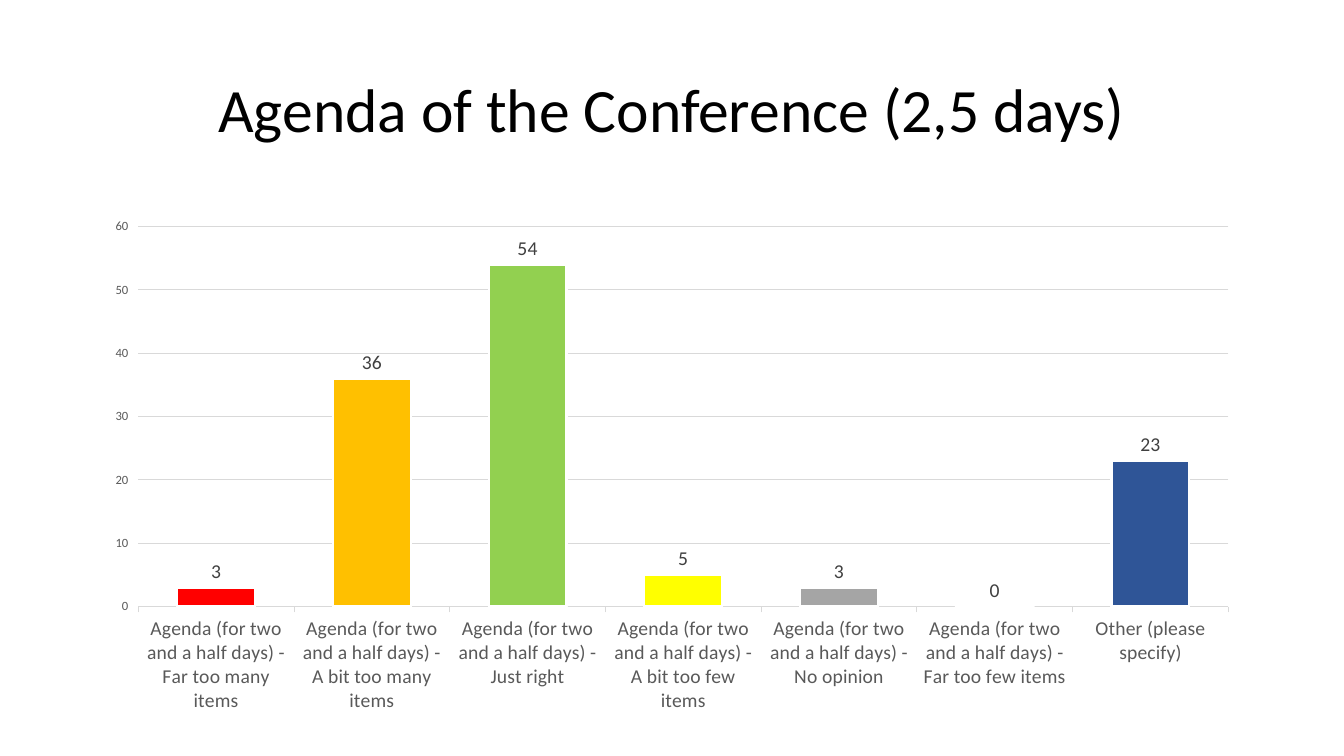
from typing import NamedTuple

from pptx import Presentation
from pptx.chart.data import CategoryChartData
from pptx.dml.color import RGBColor
from pptx.enum.chart import XL_CHART_TYPE, XL_LABEL_POSITION, XL_TICK_MARK
from pptx.enum.text import MSO_ANCHOR, PP_ALIGN
from pptx.util import Emu, Pt

SCALE = 9525  # EMU per px
FACE = "Calibri"
GREY = "D9D9D9"
HALF = "Agenda (for two and a half days) - "


class Box(NamedTuple):
    left: int
    top: int
    width: int
    height: int

    def emu(self) -> list[Emu]:
        return [Emu(n * SCALE) for n in self]


class Bar(NamedTuple):
    label: str
    value: int
    color: str


BARS = [
    Bar(HALF + "Far too many items", 3, "FF0000"),
    Bar(HALF + "A bit too many items", 36, "FFC000"),
    Bar(HALF + "Just right", 54, "92D050"),
    Bar(HALF + "A bit too few items", 5, "FFFF00"),
    Bar(HALF + "No opinion", 3, "A5A5A5"),
    Bar(HALF + "Far too few items", 0, "4472C4"),
    Bar("Other (please specify)", 23, "2F5597"),
]


def rgb(code: str) -> RGBColor:
    return RGBColor.from_string(code)


def assign(target, values: dict) -> None:
    for name, value in values.items():
        setattr(target, name, value)


def style(font, size: int, color: str) -> None:
    assign(font, {"name": FACE, "size": Pt(size), "bold": False})
    font.color.rgb = rgb(color)


def stroke(line, color: str, width: float) -> None:
    line.color.rgb = rgb(color)
    line.width = Pt(width)


def paint(fill, color: str) -> None:
    fill.solid()
    fill.fore_color.rgb = rgb(color)


def add_title(slide, text: str, box: Box) -> None:
    frame = slide.shapes.add_textbox(*box.emu()).text_frame
    assign(frame, {"word_wrap": True, "vertical_anchor": MSO_ANCHOR.MIDDLE})
    par = frame.paragraphs[0]
    assign(par, {"alignment": PP_ALIGN.CENTER, "line_spacing": 0.9})
    run = par.add_run()
    run.text = text
    style(run.font, 44, "000000")


def add_bars(slide, bars: list[Bar], box: Box) -> None:
    data = CategoryChartData()
    data.categories = [bar.label for bar in bars]
    data.add_series("Series 1", [bar.value for bar in bars])
    kind = XL_CHART_TYPE.COLUMN_CLUSTERED
    chart = slide.shapes.add_chart(kind, *box.emu(), data).chart
    assign(chart, {"has_title": False, "has_legend": False})
    style(chart.font, 10, "000000")

    # Axes and grid
    cat, val = chart.category_axis, chart.value_axis
    for axis, size in ((cat, 14), (val, 9)):
        style(axis.tick_labels.font, size, "595959")
        axis.major_tick_mark = XL_TICK_MARK.OUTSIDE
    stroke(cat.format.line, GREY, 0.75)
    val.format.line.fill.background()
    assign(val, {"minimum_scale": 0, "maximum_scale": 60, "major_unit": 10,
                 "has_major_gridlines": True})
    stroke(val.major_gridlines.format.line, GREY, 0.75)

    # Columns, each in its own colour
    plot = chart.plots[0]
    assign(plot, {"gap_width": 100, "vary_by_categories": False})
    series = plot.series[0]
    series.invert_if_negative = False
    paint(series.format.fill, "4472C4")
    stroke(series.format.line, "FFFFFF", 1.5)
    for i, bar in enumerate(bars):
        form = series.points[i].format
        paint(form.fill, bar.color)
        stroke(form.line, "FFFFFF", 1.5)

    # Values above the columns
    labels = series.data_labels
    assign(labels, {"show_value": True,
                    "position": XL_LABEL_POSITION.OUTSIDE_END})
    style(labels.font, 14, "404040")


def main() -> None:
    deck = Presentation()
    assign(deck, {"slide_width": Emu(1280 * SCALE),
                  "slide_height": Emu(720 * SCALE)})
    slide = deck.slides.add_slide(deck.slide_layouts[6])
    paint(slide.background.fill, "FFFFFF")
    add_title(slide, "Agenda of the Conference (2,5 days)",
              Box(88, 38, 1104, 139))
    add_bars(slide, BARS, Box(88, 199, 1104, 490))
    deck.save("out.pptx")


if __name__ == "__main__":
    main()
